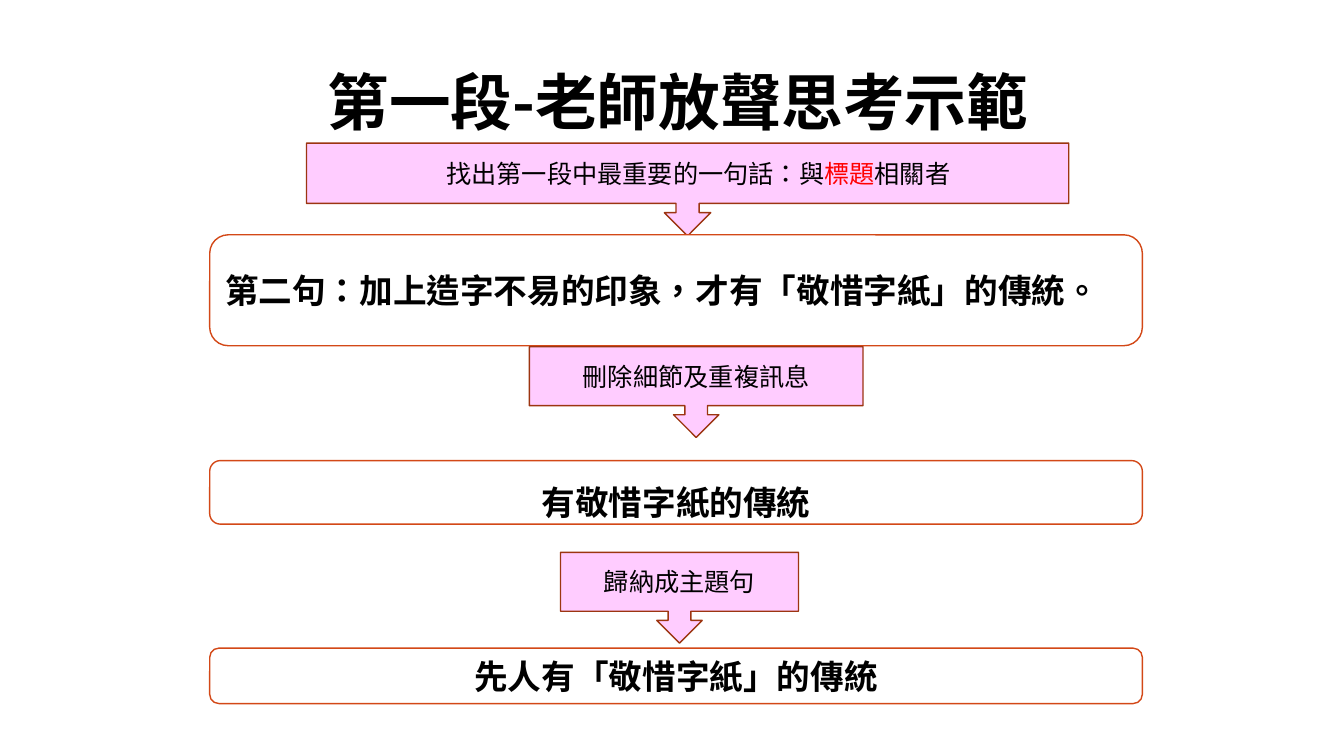
"""Build a slide that shows how the first paragraph is reduced to its topic sentence."""
import pptx
import pptx.util
from lxml import etree
from pptx.dml.color import RGBColor
from pptx.enum.lang import MSO_LANGUAGE_ID
from pptx.enum.shapes import MSO_SHAPE
from pptx.enum.text import MSO_ANCHOR, PP_ALIGN
from pptx.oxml.ns import qn

Inches = pptx.util.Inches
Pt = pptx.util.Pt

BLACK = RGBColor(0x00, 0x00, 0x00)
RED = RGBColor(0xFF, 0x00, 0x00)
WHITE = RGBColor(0xFF, 0xFF, 0xFF)
PINK = RGBColor(0xFF, 0xCC, 0xFF)
BROWN = RGBColor(0x9C, 0x35, 0x11)
ORANGE = RGBColor(0xD3, 0x48, 0x17)
CHINESE_FONT = "Noto Sans CJK SC"
LATIN_FONT = "Arial"

TITLE = "第一段-老師放聲思考示範"
STEPS = [
    {"runs": ["找出第一段中最重要的一句話：與", "標題", "相關者"], "box": (3.04, 1.42, 7.56, 0.92),
     "font": LATIN_FONT, "margin_left": 0.31},
    {"runs": ["刪除細節及重複訊息"], "box": (5.25, 3.44, 3.31, 0.9), "font": CHINESE_FONT},
    {"runs": ["歸納成主題句"], "box": (5.56, 5.48, 2.36, 0.9), "font": CHINESE_FONT},
]
HIGHLIGHT = "標題"
SENTENCE_LEFT, SENTENCE_WIDTH = 2.08, 9.25
SENTENCES = [
    {"text": "第二句：加上造字不易的印象，才有「敬惜字紙」的傳統。", "top": 2.33, "height": 1.1,
     "alignment": PP_ALIGN.LEFT},
    {"text": "有敬惜字紙的傳統", "top": 4.57, "height": 0.63, "line_spacing": 1.5},
    {"text": "先人有「敬惜字紙」的傳統", "top": 6.43, "height": 0.55},
]


def write_text(shape, texts, font_name, size, bold=False, alignment=PP_ALIGN.CENTER):
    shape.text_frame.word_wrap = True
    paragraph = shape.text_frame.paragraphs[0]
    paragraph.alignment = alignment
    font = paragraph.font
    font.name = font_name
    font.size = Pt(size)
    font.bold = bold
    font.color.rgb = BLACK
    properties = paragraph._p.pPr.find(qn("a:defRPr"))
    etree.SubElement(properties, qn("a:ea"), typeface=CHINESE_FONT)
    for text in texts:
        run = paragraph.add_run()
        run.text = text
        run.font.language_id = MSO_LANGUAGE_ID.TRADITIONAL_CHINESE
        run.font.color.rgb = RED if text == HIGHLIGHT else BLACK
    return paragraph


def add_panel(slide, kind, box, fill, line):
    shape = slide.shapes.add_shape(kind, *map(Inches, box))
    shape.shadow.inherit = False
    shape.fill.solid()
    shape.fill.fore_color.rgb = fill
    shape.line.color.rgb = line
    shape.line.width = Pt(1)
    shape.text_frame.vertical_anchor = MSO_ANCHOR.MIDDLE
    return shape


def main():
    presentation = pptx.Presentation()
    presentation.slide_width = Inches(13.33)
    presentation.slide_height = Inches(7.5)
    slide = presentation.slides.add_slide(presentation.slide_layouts[6])

    title = slide.shapes.add_textbox(*map(Inches, (2.25, 0.58, 8.95, 1.21)))
    write_text(title, [TITLE], CHINESE_FONT, 44, bold=True)

    for step, sentence in zip(STEPS, SENTENCES):
        callout = add_panel(slide, MSO_SHAPE.DOWN_ARROW_CALLOUT, step["box"], PINK, BROWN)
        callout.text_frame.margin_left = Inches(step.get("margin_left", 0.1))
        write_text(callout, step["runs"], step["font"], 18)

        box = (SENTENCE_LEFT, sentence["top"], SENTENCE_WIDTH, sentence["height"])
        panel = add_panel(slide, MSO_SHAPE.ROUNDED_RECTANGLE, box, WHITE, ORANGE)
        paragraph = write_text(panel, [sentence["text"]], LATIN_FONT, 24, bold=True,
                               alignment=sentence.get("alignment", PP_ALIGN.CENTER))
        paragraph.line_spacing = sentence.get("line_spacing")

    presentation.save("out.pptx")


if __name__ == "__main__":
    main()
